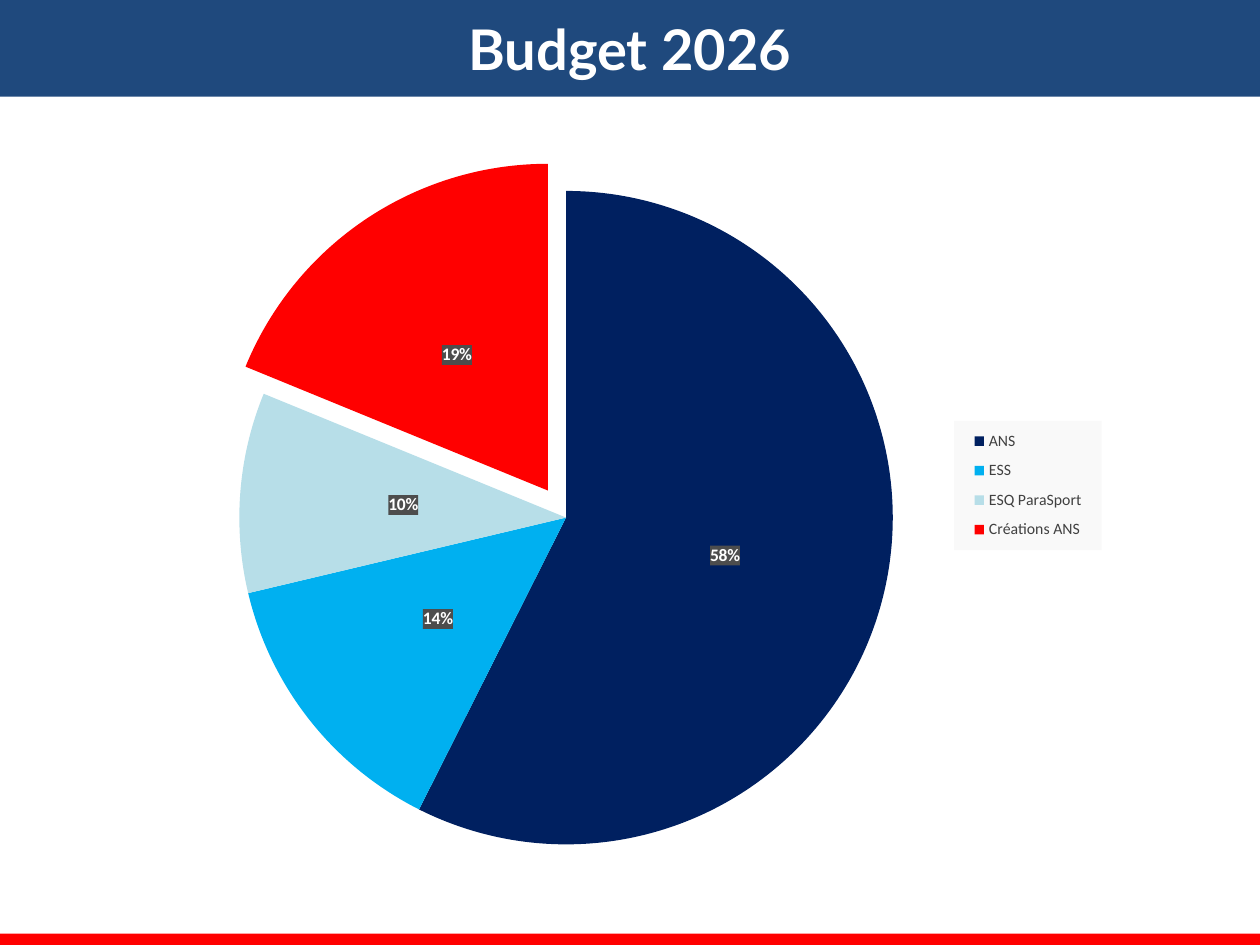
from lxml.etree import fromstring
from pptx import Presentation
from pptx.chart.data import CategoryChartData as ChartData
from pptx.dml.color import RGBColor as RGB
from pptx.enum.chart import XL_CHART_TYPE as ChartType
from pptx.enum.chart import XL_LABEL_POSITION as LabelPos
from pptx.enum.chart import XL_LEGEND_POSITION as LegendPos
from pptx.enum.shapes import MSO_SHAPE as Shape
from pptx.enum.text import MSO_ANCHOR as Anchor
from pptx.enum.text import PP_ALIGN as Align
from pptx.oxml.ns import nsdecls
from pptx.util import Pt

TITLE = "Budget 2026"
SHARES = [
    ("ANS", 58, "002060"),
    ("ESS", 14, "00B0F0"),
    ("ESQ ParaSport", 10, "B7DEE8"),
    ("Créations ANS", 19, "FF0000"),
]
EXPLODED = "Créations ANS"
EXPLOSION = 10

THEME = {
    "banner": "1F497D", "footer": "FF0000", "white": "FFFFFF", "black": "000000",
    "legend_text": "404040", "legend_fill": "F9F9F9", "label_fill": "4D4D4D",
    "title_font": "Lato", "chart_font": "Calibri",
    "title_size": 32, "chart_size": 10, "legend_size": 9,
}
WIDTH, HEIGHT = 720, 540
BANNER = (0, 0, WIDTH, 55.2)
FOOTER = (0, 533.5, WIDTH, 6.5)
CHART = (79.2, 88.6, 561.6, 410.4)
PIE_AREA = (0.1, 0.05, 0.67, 0.91)
LEGEND_AREA = (0.83, 0.37, 0.15, 0.18)


def style_font(font, name, size, color, bold=False):
    font.name = name
    font.size = Pt(size)
    font.bold = bold
    font.color.rgb = RGB.from_string(color)


def add_band(s, box, color):
    sp = s.shapes.add_shape(Shape.RECTANGLE, *map(Pt, box))
    sp.shadow.inherit = False
    sp.fill.solid()
    sp.fill.fore_color.rgb = RGB.from_string(color)
    sp.line.fill.background()
    return sp


def write_text(sp, text, **fmt):
    tf = sp.text_frame
    tf.word_wrap = True
    tf.vertical_anchor = Anchor.MIDDLE
    p = tf.paragraphs[0]
    p.alignment = Align.CENTER
    r = p.add_run()
    r.text = text
    style_font(r.font, **fmt)


def layout_xml(area, inner=False):
    target = '<c:layoutTarget val="inner"/>' if inner else ""
    modes = "".join(f'<c:{k}Mode val="edge"/>' for k in "xy")
    sizes = "".join(f'<c:{k} val="{v}"/>' for k, v in zip("xywh", area))
    return fromstring(f'<c:layout {nsdecls("c")}><c:manualLayout>{target}{modes}{sizes}'
                      '</c:manualLayout></c:layout>')


def fill_xml(color):
    return fromstring(f'<c:spPr {nsdecls("c", "a")}><a:solidFill><a:srgbClr val="{color}"/>'
                      '</a:solidFill><a:ln><a:noFill/></a:ln></c:spPr>')


def find(root, query):
    return root.xpath(query)[0]


def add_pie(s):
    names, values, colors = zip(*SHARES)
    data = ChartData()
    data.categories = names
    data.add_series("Series 1", values)
    chart = s.shapes.add_chart(ChartType.PIE, *map(Pt, CHART), data).chart
    chart.has_title = False
    font = THEME["chart_font"]
    style_font(chart.font, font, THEME["chart_size"], THEME["black"])

    plot = chart.plots[0]
    plot.vary_by_categories = True
    for i, color in enumerate(colors):
        fmt = plot.series[0].points[i].format
        fmt.fill.solid()
        fmt.fill.fore_color.rgb = RGB.from_string(color)
        fmt.line.fill.background()

    plot.has_data_labels = True
    labels = plot.data_labels
    labels.show_value = True
    labels.show_percentage = False
    labels.number_format = '0"%"'
    labels.number_format_is_linked = False
    labels.position = LabelPos.CENTER
    style_font(labels.font, font, THEME["chart_size"], THEME["white"], True)

    chart.has_legend = True
    chart.legend.position = LegendPos.RIGHT
    chart.legend.include_in_layout = False
    style_font(chart.legend.font, font, THEME["legend_size"], THEME["legend_text"])

    root = chart.element
    for old in root.xpath("//c:plotArea/c:layout | //c:legend/c:layout"):
        old.getparent().remove(old)
    find(root, "//c:plotArea").insert(0, layout_xml(PIE_AREA, inner=True))
    find(root, "//c:legend/c:overlay").addprevious(layout_xml(LEGEND_AREA))
    for parent, color in (("legend", "legend_fill"), ("dLbls", "label_fill")):
        find(root, f"//c:{parent}/c:txPr").addprevious(fill_xml(THEME[color]))
    index = names.index(EXPLODED)
    find(root, f'//c:dPt[c:idx/@val="{index}"]/c:spPr').addprevious(
        fromstring(f'<c:explosion {nsdecls("c")} val="{EXPLOSION}"/>'))


def main():
    prs = Presentation()
    prs.slide_width, prs.slide_height = Pt(WIDTH), Pt(HEIGHT)
    s = prs.slides.add_slide(prs.slide_layouts[6])
    write_text(add_band(s, BANNER, THEME["banner"]), TITLE, name=THEME["title_font"],
               size=THEME["title_size"], color=THEME["white"], bold=True)
    add_band(s, FOOTER, THEME["footer"])
    add_pie(s)
    prs.save("out.pptx")


if __name__ == "__main__":
    main()
